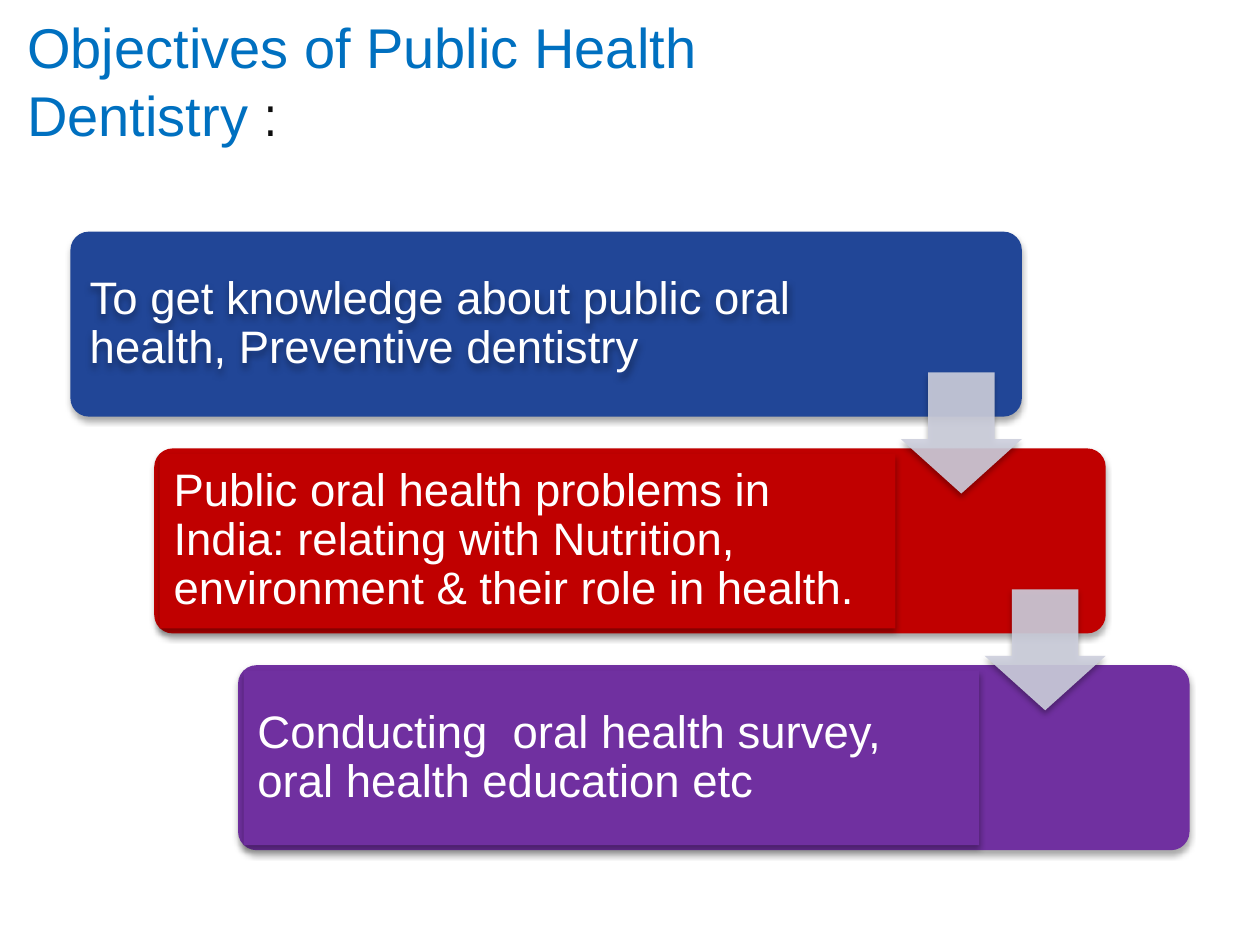
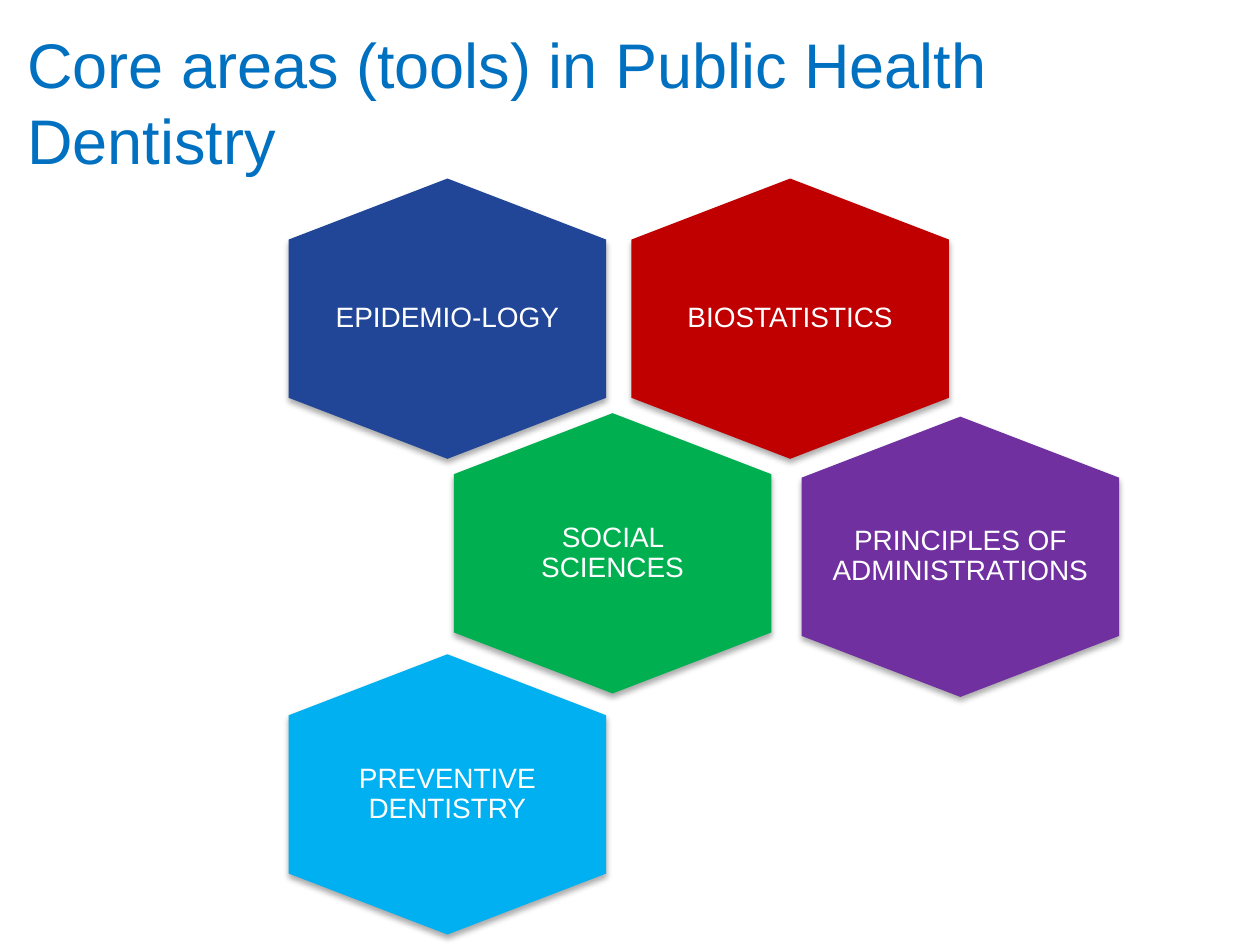
"""Build two slides on the objectives and core areas of public health dentistry."""
from lxml import etree
from pptx import Presentation
from pptx.dml.color import RGBColor
from pptx.enum import shapes, text
from pptx.oxml import ns
from pptx.util import Cm, Pt

TITLE_BLUE = RGBColor(0x00, 0x70, 0xC0)
NEAR_BLACK = RGBColor(0x0D, 0x0D, 0x0D)
WHITE = RGBColor(0xFF, 0xFF, 0xFF)
NAVY = RGBColor(0x21, 0x46, 0x97)
RED = RGBColor(0xC0, 0x00, 0x00)
GREEN = RGBColor(0x00, 0xB0, 0x50)
PURPLE = RGBColor(0x70, 0x30, 0xA0)
SKY = RGBColor(0x00, 0xB0, 0xF0)
ARROW_GREY = RGBColor(0xCD, 0xCF, 0xDD)


def write(shape, runs, size, align=text.PP_ALIGN.LEFT, spacing=1.0, insets=(0.25, 0.13)):
    """Write (wording, font, colour) runs as one vertically centred paragraph."""
    frame = shape.text_frame
    frame.word_wrap = True
    frame.vertical_anchor = text.MSO_ANCHOR.MIDDLE
    frame.margin_left = frame.margin_right = Cm(insets[0])
    frame.margin_top = frame.margin_bottom = Cm(insets[1])
    paragraph = frame.paragraphs[0]
    paragraph.alignment = align
    paragraph.line_spacing = spacing
    for wording, font_name, colour in runs:
        run = paragraph.add_run()
        run.text = wording
        run.font.name = font_name
        run.font.size = Pt(size)
        run.font.color.rgb = colour


def paint(shape, colour=None, opacity=100):
    """Give a shape a flat fill, no outline and the shared soft shadow."""
    if colour is None:
        shape.fill.background()
    else:
        shape.fill.solid()
        shape.fill.fore_color.rgb = colour
    shape.line.fill.background()
    shape.shadow.inherit = False
    properties = shape._element.spPr
    if opacity < 100:
        fill_colour = properties.find(ns.qn("a:solidFill"))[0]
        etree.SubElement(fill_colour, ns.qn("a:alpha"), val=str(opacity * 1000))
    shadow = etree.SubElement(
        properties.find(ns.qn("a:effectLst")), ns.qn("a:outerShdw"),
        blurRad=str(Pt(3.5)), dist=str(Pt(2.2)), dir="5400000", rotWithShape="0")
    shadow_colour = etree.SubElement(shadow, ns.qn("a:srgbClr"), val="000000")
    etree.SubElement(shadow_colour, ns.qn("a:alpha"), val="32000")


presentation = Presentation()
presentation.slide_width = Cm(25.4)
presentation.slide_height = Cm(19.05)

titles = [
    (0.89, 18.39, 32, [("Objectives of Public Health Dentistry ", "Arial", TITLE_BLUE),
                       (":", "Arial Narrow", NEAR_BLACK)]),
    (1.32, 22.99, 36, [("Core areas (tools) in Public Health Dentistry", "Arial", TITLE_BLUE)]),
]
slides = []
for top, width, size, runs in titles:
    slide = presentation.slides.add_slide(presentation.slide_layouts[6])
    title = slide.shapes.add_textbox(Cm(0.3), Cm(top), Cm(width), Cm(1.45))
    write(title, runs, size)
    slides.append(slide)
objectives_slide, areas_slide = slides

STEP_X, STEP_Y = 1.69, 4.37
objectives = [
    ("To get knowledge about public oral health, Preventive dentistry", NAVY, None, 15.14),
    ("Public oral health problems in India: relating with Nutrition, "
     "environment & their role in health.", RED, RED, 14.83),
    ("Conducting  oral health survey, oral health education etc", PURPLE, PURPLE, 14.83),
]
for index, (wording, card_colour, panel_colour, panel_width) in enumerate(objectives):
    left, top = 1.42 + index * STEP_X, 4.67 + index * STEP_Y
    card = objectives_slide.shapes.add_shape(
        shapes.MSO_SHAPE.ROUNDED_RECTANGLE, Cm(left), Cm(top), Cm(19.18), Cm(3.73))
    card.adjustments[0] = 0.1
    paint(card, card_colour)
    panel = objectives_slide.shapes.add_shape(
        shapes.MSO_SHAPE.RECTANGLE, Cm(left + 0.11), Cm(top + 0.11), Cm(panel_width), Cm(3.52))
    paint(panel, panel_colour)
    write(panel, [(wording, "Arial", WHITE)], 26, spacing=0.9, insets=(0.28, 0.28))

for index in range(len(objectives) - 1):
    arrow = objectives_slide.shapes.add_shape(
        shapes.MSO_SHAPE.DOWN_ARROW, Cm(18.16 + index * STEP_X), Cm(7.51 + index * STEP_Y),
        Cm(2.44), Cm(2.44))
    arrow.adjustments[0] = 0.45
    arrow.adjustments[1] = 0.55
    arrow.adjustments[0], arrow.adjustments[1] = 0.55, 0.45
    paint(arrow, ARROW_GREY, opacity=90)

HEXAGON_WIDTH, HEXAGON_HEIGHT, SHOULDER = 6.4, 5.65, 1.23
wide_insets, narrow_insets = (0.79, 0.89), (0.61, 0.71)
areas = [
    ("BIOSTATISTICS", 12.73, 3.6, RED, wide_insets),
    ("EPIDEMIO-LOGY", 5.82, 3.6, NAVY, narrow_insets),
    ("SOCIAL SCIENCES", 9.15, 8.33, GREEN, wide_insets),
    ("PRINCIPLES OF ADMINISTRATIONS", 16.16, 8.4, PURPLE, narrow_insets),
    ("PREVENTIVE DENTISTRY", 5.82, 13.19, SKY, narrow_insets),
]
for wording, left, top, colour, insets in areas:
    middle, right = left + HEXAGON_WIDTH / 2, left + HEXAGON_WIDTH
    upper, lower = top + SHOULDER, top + HEXAGON_HEIGHT - SHOULDER
    corners = [(right, upper), (right, lower), (middle, top + HEXAGON_HEIGHT),
               (left, lower), (left, upper)]
    outline = areas_slide.shapes.build_freeform(Cm(middle), Cm(top))
    outline.add_line_segments([(Cm(x), Cm(y)) for x, y in corners], close=True)
    hexagon = outline.convert_to_shape()
    paint(hexagon, colour)
    write(hexagon, [(wording, "Arial", WHITE)], 16, align=text.PP_ALIGN.CENTER,
          spacing=0.9, insets=insets)

presentation.save("out.pptx")
